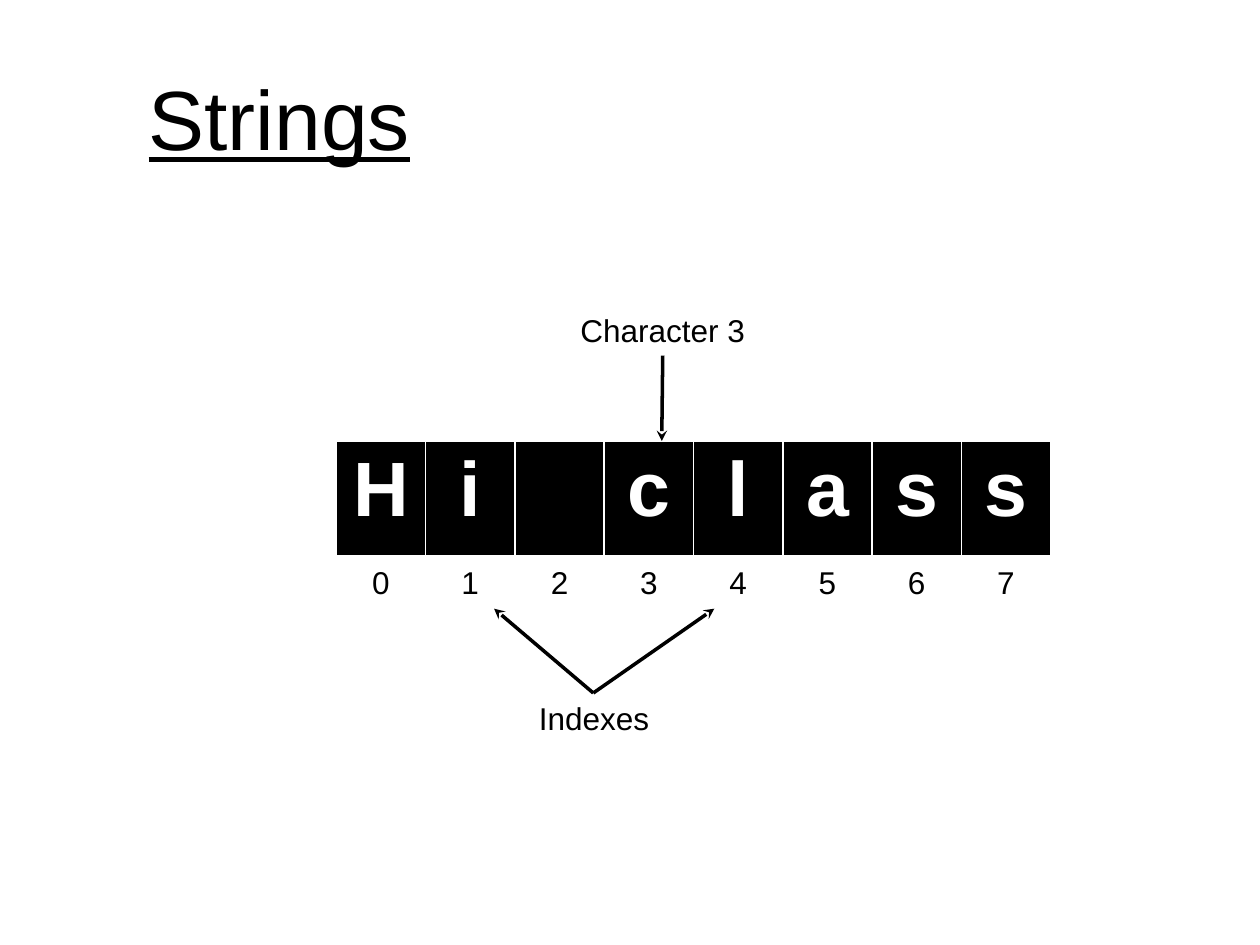
from lxml import etree
from pptx import Presentation
from pptx.dml.color import RGBColor
from pptx.enum import shapes, text
from pptx.oxml import ns, xmlchemy
from pptx.util import Cm, Pt

COLORS = {"ink": "000000", "paper": "FFFFFF"}
FONT = "Arial"
WORD = "Hi class"
CELL_W, CELL_H = 1.8, 2.34
LABEL_H = 1.02


def rgb(name):
    return RGBColor.from_string(COLORS[name])


def set_font(p, size, color="ink", bold=False, underline=False):
    for r in p.runs:
        r.font.name, r.font.size = FONT, Pt(size)
        r.font.bold, r.font.underline = bold, underline
        r.font.color.rgb = rgb(color)


def add_title(s, x, y, w, h):
    title = s.shapes.title
    title.left, title.top, title.width, title.height = Cm(x), Cm(y), Cm(w), Cm(h)
    tf = title.text_frame
    tf.text = "Strings"
    tf.vertical_anchor = text.MSO_ANCHOR.MIDDLE
    p = tf.paragraphs[0]
    p.alignment = text.PP_ALIGN.LEFT
    set_font(p, 48, underline=True)


def add_label(s, words, x, y, w):
    tf = s.shapes.add_textbox(Cm(x), Cm(y), Cm(w), Cm(LABEL_H)).text_frame
    tf.word_wrap = False
    tf.auto_size = text.MSO_AUTO_SIZE.SHAPE_TO_FIT_TEXT
    tf.text = words
    p = tf.paragraphs[0]
    p.alignment = text.PP_ALIGN.CENTER
    set_font(p, 18)


def add_arrow(s, x1, y1, x2, y2):
    arrow = s.shapes.add_connector(
        shapes.MSO_CONNECTOR.STRAIGHT, Cm(x1), Cm(y1), Cm(x2), Cm(y2))
    arrow.line.width = Pt(2)
    arrow.line.color.rgb = rgb("ink")
    ln = arrow.line._get_or_add_ln()
    etree.SubElement(ln, ns.qn("a:tailEnd"), type="stealth")
    etree.SubElement(arrow._element.spPr, ns.qn("a:effectLst"))


def set_borders(cell):
    tcPr = cell._tc.get_or_add_tcPr()
    for side, width in (("L", 1), ("R", 1), ("T", 1), ("B", 3)):
        ln = xmlchemy.OxmlElement(f"a:ln{side}")
        ln.set("w", str(Pt(width)))
        fill = etree.SubElement(ln, ns.qn("a:solidFill"))
        etree.SubElement(fill, ns.qn("a:srgbClr"), val=COLORS["paper"])
        tcPr.append(ln)


def add_letters(s, x, y):
    table = s.shapes.add_table(
        1, len(WORD), Cm(x), Cm(y), Cm(CELL_W * len(WORD)), Cm(CELL_H)).table
    table.first_row = table.horz_banding = False
    for i, letter in enumerate(WORD):
        table.columns[i].width = Cm(CELL_W)
        cell = table.cell(0, i)
        set_borders(cell)
        cell.fill.solid()
        cell.fill.fore_color.rgb = rgb("ink")
        cell.text = letter.strip()
        p = cell.text_frame.paragraphs[0]
        p.alignment = text.PP_ALIGN.CENTER
        set_font(p, 44, "paper", bold=True)


def add_string_diagram(s, x, y):
    """Letters with their indexes below, and callouts above and below."""
    letters_y = y + 2.74
    index_y = letters_y + CELL_H
    callout_y = y + 7.82
    add_letters(s, x, letters_y)
    for i in range(len(WORD)):
        add_label(s, str(i), x + CELL_W * i + 0.47, index_y, 0.86)

    add_label(s, "Character 3", x + 4.65, y, 3.86)
    add_arrow(s, x + 6.58, y + LABEL_H, x + 6.56, letters_y)
    add_label(s, "Indexes", x + 3.81, callout_y, 2.77)
    for tip in (3.18, 7.62):
        add_arrow(s, x + 5.18, callout_y, x + tip, y + 6.12)


def main():
    prs = Presentation()
    prs.slide_width, prs.slide_height = Cm(25.4), Cm(19.05)
    s = prs.slides.add_slide(prs.slide_layouts[5])
    add_title(s, 2.74, 0.76, 22.66, 3.18)
    add_string_diagram(s, 6.78, 6.15)
    prs.save("out.pptx")


if __name__ == "__main__":
    main()
